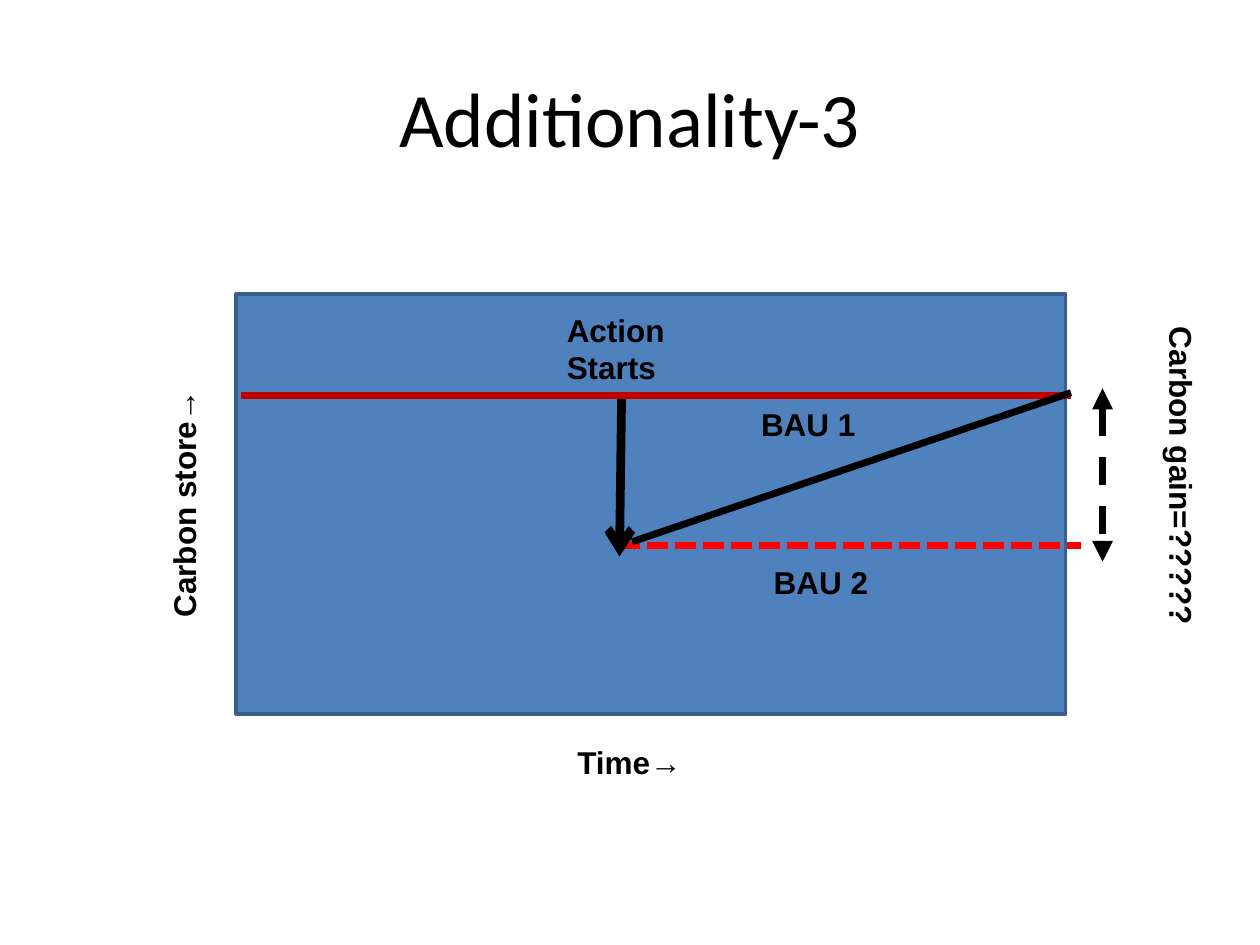
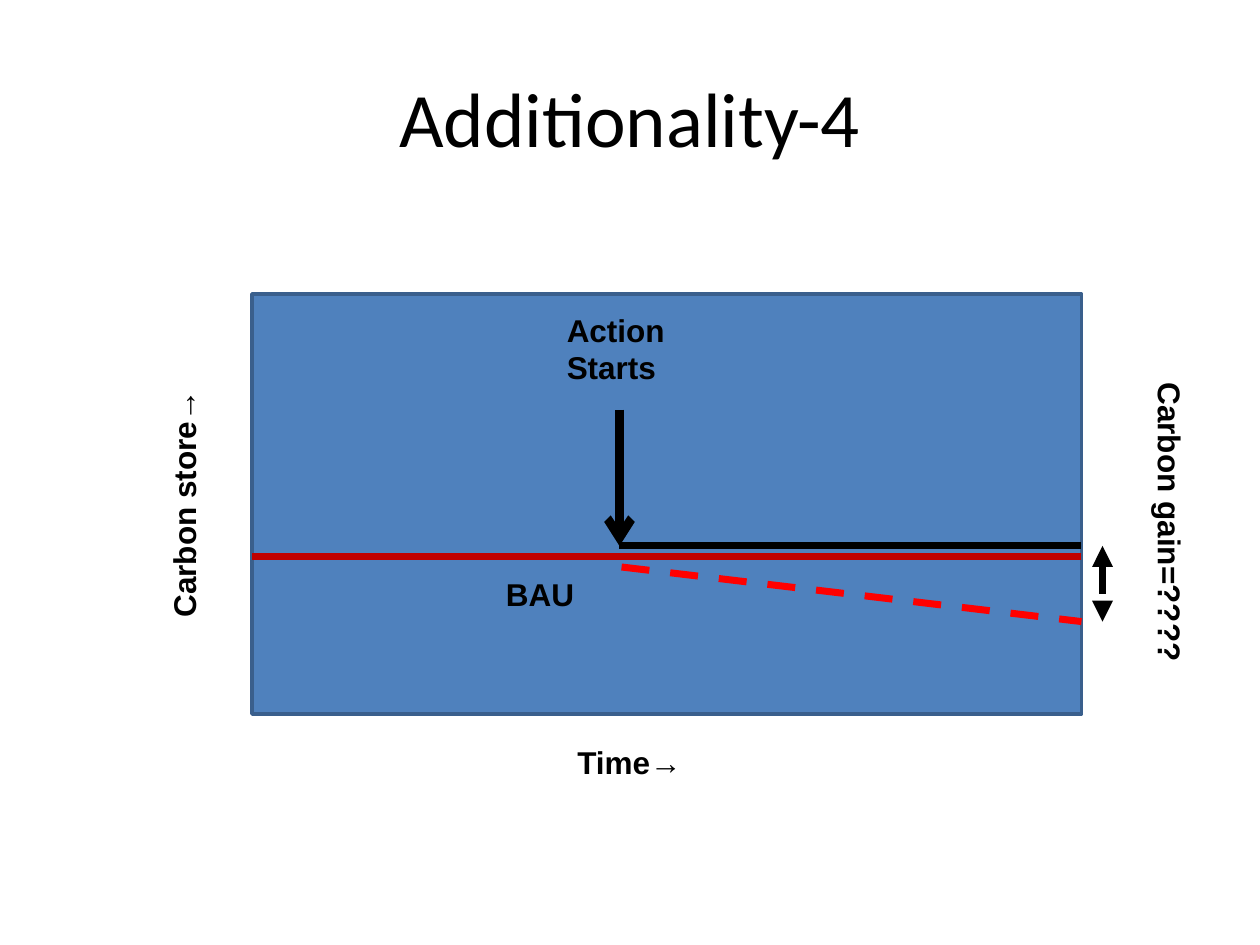
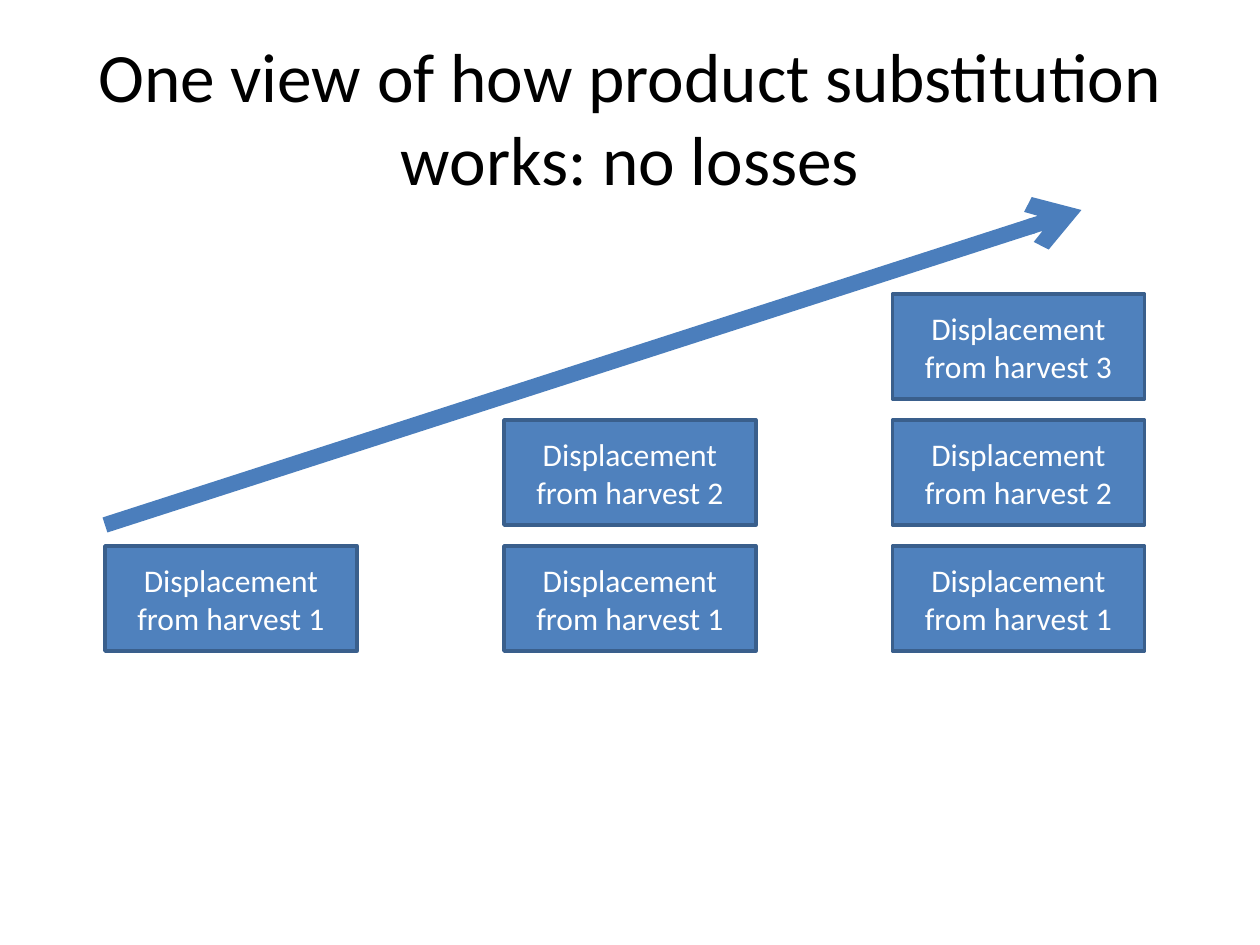
from typing import NamedTuple

from lxml import etree
from pptx import Presentation
from pptx import util as u
from pptx.dml.color import RGBColor
from pptx.enum import dml, shapes, text
from pptx.oxml.ns import qn

COLOURS = {
    "black": "000000",
    "white": "FFFFFF",
    "blue": "4F81BD",
    "edge": "3A5F8C",
    "arrow": "4B7EBC",
    "baseline": "C00000",
    "projection": "FF0000",
}
WIDTH, HEIGHT = u.Inches(10), u.Inches(7.5)
COLUMNS, ROWS = 120, 90
PLOT_TOP, PLOT_WIDTH, PLOT_HEIGHT = 28, 79, 40
LABEL_HEIGHT = 4.8
GAIN_COLUMN = 105
DASH, SHORT_DASH = dml.MSO_LINE.DASH, dml.MSO_LINE.SQUARE_DOT


class Label(NamedTuple):
    words: str
    col: float
    row: float
    cols: float
    rows: float = LABEL_HEIGHT
    turn: int = 0


class Line(NamedTuple):
    start: tuple[float, float]
    end: tuple[float, float]
    colour: str = "black"
    weight: float = 4
    dash: dml.MSO_LINE | None = None
    head: str = ""
    tail: str = ""


class Graph(NamedTuple):
    title: str
    plot_col: float
    lines: list[Line]
    labels: list[Label]


SHARED_LABELS = [
    Label("Time→", 53.8, 70.2, 12.4),
    Label("Carbon store→", 5.4, 45.5, 24.2, turn=270),
    Label("Action\nStarts", 52.8, 29, 12.7, 8.5),
]


def gain_arrow(top: float, bottom: float) -> Line:
    return Line((GAIN_COLUMN, top), (GAIN_COLUMN, bottom), dash=DASH,
                head="triangle", tail="triangle")


GRAPHS = [
    Graph(
        "Additionality-3", 22.5,
        [
            Line((23, 37.7), (102, 37.7), "baseline"),
            Line((59, 52), (103, 52), "projection", dash=SHORT_DASH),
            gain_arrow(37, 53.5),
            Line((59.2, 38), (59, 53), weight=5, tail="arrow"),
            Line((60.2, 51.6), (102, 37.4)),
        ],
        [
            Label("BAU 1", 71.3, 38, 11.5),
            Label("BAU 2", 72.5, 53, 11.5),
            Label("Carbon gain=?????", 97, 43.1, 31.1, turn=90),
        ],
    ),
    Graph(
        "Additionality-4", 24,
        [
            Line((24, 53), (103, 53), "baseline"),
            Line((59, 52), (103, 52)),
            gain_arrow(52, 59.2),
            Line((59, 39), (59, 52), weight=5, tail="arrow"),
            Line((59.2, 54), (103, 59.2), "projection", dash=DASH),
        ],
        [
            Label("BAU", 47, 54.2, 9),
            Label("Carbon gain=????", 96.8, 47.5, 29.3, turn=90),
        ],
    ),
]

HARVEST_COLUMNS = [10, 48, 85]
HARVEST_ROW, HARVEST_STEP = 52, 12
HARVEST_COLS, HARVEST_ROWS = 24, 10


def x(cols: float) -> int:
    return round(WIDTH * cols / COLUMNS)


def y(rows: float) -> int:
    return round(HEIGHT * rows / ROWS)


def rgb(name: str) -> RGBColor:
    return RGBColor.from_string(COLOURS[name])


def format_text(tf, font: str, size: float, colour: str, bold: bool = False, align=None) -> None:
    for p in tf.paragraphs:
        p.alignment = align
        for r in p.runs:
            r.font.name = font
            r.font.size = u.Pt(size)
            r.font.bold = bold
            r.font.color.rgb = rgb(colour)


def add_slide(prs, title: str, size: float = 44):
    s = prs.slides.add_slide(prs.slide_layouts[5])
    sp = s.shapes.title
    sp.left, sp.top, sp.width, sp.height = x(6), y(3.6), x(108), y(15)
    tf = sp.text_frame
    tf.text = title
    tf.word_wrap = True
    tf.auto_size = text.MSO_AUTO_SIZE.NONE
    tf.vertical_anchor = text.MSO_ANCHOR.MIDDLE
    format_text(tf, "Calibri", size, "black", align=text.PP_ALIGN.CENTER)
    return s


def add_box(s, col: float, row: float, cols: float, rows: float, words: str = "") -> None:
    sp = s.shapes.add_shape(shapes.MSO_SHAPE.RECTANGLE, x(col), y(row), x(cols), y(rows))
    sp.shadow.inherit = False
    sp.fill.solid()
    sp.fill.fore_color.rgb = rgb("blue")
    sp.line.color.rgb = rgb("edge")
    sp.line.width = u.Pt(2)
    if words:
        tf = sp.text_frame
        tf.text = words
        tf.word_wrap = True
        tf.vertical_anchor = text.MSO_ANCHOR.MIDDLE
        format_text(tf, "Calibri", 18, "white", align=text.PP_ALIGN.CENTER)


def add_label(s, label: Label) -> None:
    sp = s.shapes.add_textbox(x(label.col), y(label.row), x(label.cols), y(label.rows))
    sp.rotation = label.turn
    tf = sp.text_frame
    tf.text = label.words
    tf.word_wrap = False
    tf.auto_size = text.MSO_AUTO_SIZE.SHAPE_TO_FIT_TEXT
    format_text(tf, "Arial", 18, "black", bold=True)


def add_line(s, line: Line) -> None:
    (x1, y1), (x2, y2) = line.start, line.end
    sp = s.shapes.add_connector(shapes.MSO_CONNECTOR.STRAIGHT, x(x1), y(y1), x(x2), y(y2))
    sp.line.color.rgb = rgb(line.colour)
    sp.line.width = u.Pt(line.weight)
    if line.dash is not None:
        sp.line.dash_style = line.dash
    ln = sp.line._get_or_add_ln()
    for tag, kind in (("a:headEnd", line.head), ("a:tailEnd", line.tail)):
        if kind:
            etree.SubElement(ln, qn(tag), type=kind)
    etree.SubElement(sp._element.spPr, qn("a:effectLst"))


def add_graph(prs, graph: Graph) -> None:
    s = add_slide(prs, graph.title)
    add_box(s, graph.plot_col, PLOT_TOP, PLOT_WIDTH, PLOT_HEIGHT)
    for line in graph.lines:
        add_line(s, line)
    for label in SHARED_LABELS + graph.labels:
        add_label(s, label)


def add_substitution(prs) -> None:
    s = add_slide(prs, "One view of how product substitution works: no losses", 39.6)
    for count, col in enumerate(HARVEST_COLUMNS, start=1):
        for level in range(count):
            add_box(s, col, HARVEST_ROW - level * HARVEST_STEP, HARVEST_COLS, HARVEST_ROWS,
                    f"Displacement from harvest {level + 1}")
    add_line(s, Line((10, 50), (103, 20), "arrow", 9, tail="arrow"))


def main() -> None:
    prs = Presentation()
    prs.slide_width, prs.slide_height = WIDTH, HEIGHT
    for graph in GRAPHS:
        add_graph(prs, graph)
    add_substitution(prs)
    prs.save("out.pptx")


if __name__ == "__main__":
    main()
